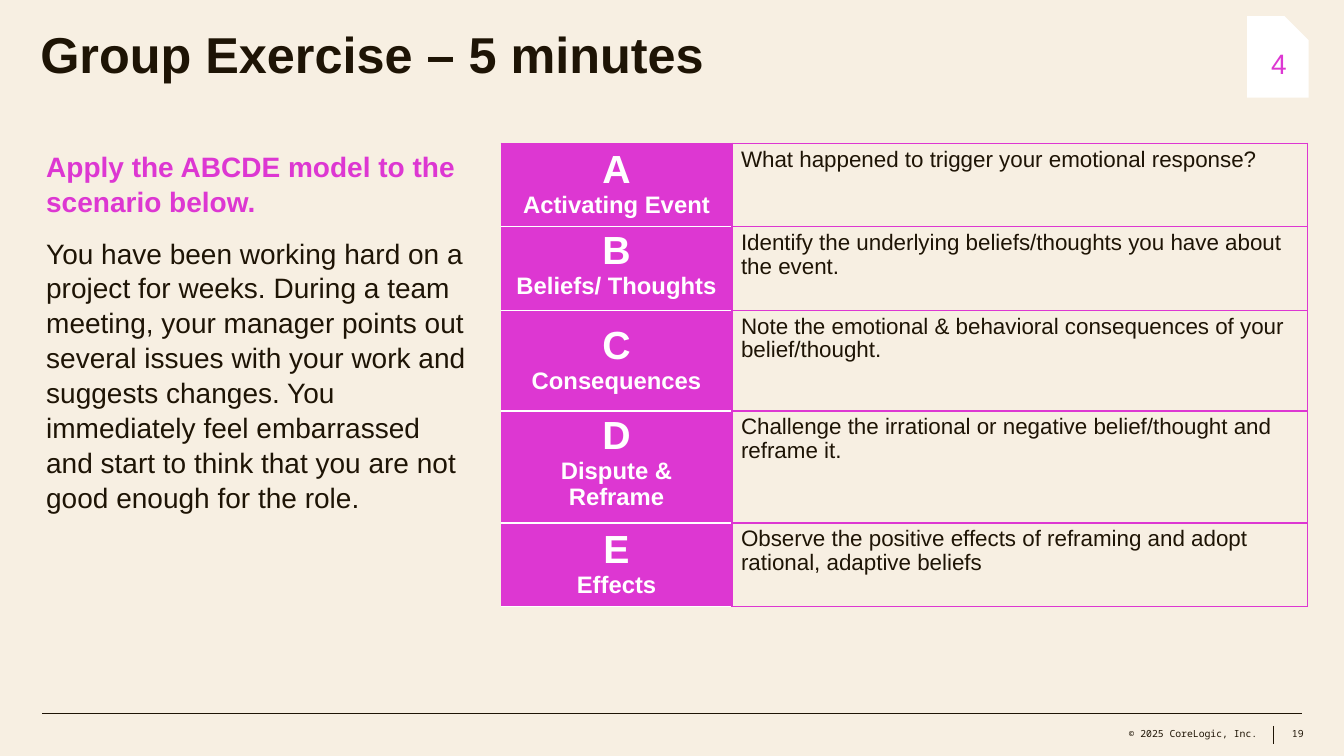
from dataclasses import dataclass

from lxml import etree
from pptx import Presentation, util as u
from pptx.dml.color import RGBColor
from pptx.enum import shapes, text
from pptx.oxml import ns


@dataclass(frozen=True)
class Theme:
    """Colours, fonts and type sizes of the slide."""
    paper: str = "F7EFE2"
    ink: str = "1E1405"
    accent: str = "DD37D2"
    white: str = "FFFFFF"
    sans: str = "Arial"
    mono: str = "Noto Sans Mono"
    title: int = 36
    letter: int = 28
    body: int = 20
    label: int = 17
    prompt: int = 16
    footer: int = 7


THEME = Theme()
ALIGN = text.PP_ALIGN
ANCHOR = text.MSO_ANCHOR
STEPS = [
    ("A", "Activating Event", "What happened to trigger your emotional response?", 0.79, ANCHOR.MIDDLE),
    ("B", "Beliefs/ Thoughts", "Identify the underlying beliefs/thoughts you have about the event.",
     0.83, ANCHOR.TOP),
    ("C", "Consequences", "Note the emotional & behavioral consequences of your belief/thought.",
     1.0, ANCHOR.MIDDLE),
    ("D", "Dispute & Reframe", "Challenge the irrational or negative belief/thought and reframe it.",
     1.06, ANCHOR.TOP),
    ("E", "Effects", "Observe the positive effects of reframing and adopt rational, adaptive beliefs",
     0.83, ANCHOR.MIDDLE),
]
SCENARIO = (
    "You have been working hard on a project for weeks. During a team meeting, your manager points out "
    "several issues with your work and suggests changes. You immediately feel embarrassed and start to "
    "think that you are not good enough for the role."
)


def inches(box):
    """Turn a box of numbers into lengths."""
    return [u.Inches(value) for value in box]


def style(target, values):
    """Set attributes from a dict of format values."""
    for name, value in values.items():
        setattr(target, name, value)


def write(frame, lines):
    """Fill a text frame with (wording, size, colour, font values, paragraph values) lines."""
    for index, (wording, size, colour, font, layout) in enumerate(lines):
        paragraph = frame.add_paragraph() if index else frame.paragraphs[0]
        style(paragraph, layout)
        run = paragraph.add_run()
        run.text = wording
        style(run.font, {"name": THEME.sans, "size": u.Pt(size), **font})
        run.font.color.rgb = RGBColor.from_string(colour)


def add_text(slide, box, lines, margins=(0.1, 0.05, 0.1, 0.05), anchor=ANCHOR.TOP):
    """Place a wrapping text box."""
    frame = slide.shapes.add_textbox(*inches(box)).text_frame
    sides = ("margin_left", "margin_top", "margin_right", "margin_bottom")
    style(frame, {"word_wrap": True, "vertical_anchor": anchor, **dict(zip(sides, inches(margins)))})
    write(frame, lines)


def add_rule(slide, start, end):
    """Draw a thin footer rule."""
    rule = slide.shapes.add_connector(shapes.MSO_CONNECTOR.STRAIGHT, *inches(start + end))
    rule.line.width = u.Pt(0.5)
    rule.line.color.rgb = RGBColor.from_string(THEME.ink)
    etree.SubElement(rule.element.spPr, ns.qn("a:effectLst"))


def add_page_tab(slide, box):
    """Place the numbered tab with its snipped corner."""
    tab = slide.shapes.add_shape(shapes.MSO_SHAPE.SNIP_1_RECTANGLE, *inches(box))
    tab.shadow.inherit = False
    tab.adjustments[0] = 0.395
    tab.fill.solid()
    tab.fill.fore_color.rgb = RGBColor.from_string(THEME.white)
    tab.line.fill.background()
    tab.text_frame.vertical_anchor = ANCHOR.MIDDLE
    write(tab.text_frame, [("4", THEME.body, THEME.accent, {}, {"alignment": ALIGN.RIGHT})])


def set_borders(cell, colours):
    """Draw the left, right, top and bottom borders of a cell."""
    properties = cell._tc.get_or_add_tcPr()
    for side, colour in zip("LRTB", colours):
        line = etree.SubElement(properties, ns.qn(f"a:ln{side}"), w=str(u.Pt(1)))
        fill = etree.SubElement(line, ns.qn("a:solidFill"))
        etree.SubElement(fill, ns.qn("a:srgbClr"), val=colour)


def add_model_table(slide, box):
    """Place the ABCDE table, one row for each step."""
    table = slide.shapes.add_table(len(STEPS), 2, *inches(box)).table
    style(table, {"first_row": False, "horz_banding": False})
    label_width = 2.29
    for column, width in zip(table.columns, (label_width, box[2] - label_width)):
        column.width = u.Inches(width)
    accent, white = THEME.accent, THEME.white
    for index, (letter, name, prompt, height, anchor) in enumerate(STEPS):
        table.rows[index].height = u.Inches(height)
        label, answer = table.cell(index, 0), table.cell(index, 1)
        for cell in (label, answer):
            style(cell, {"margin_left": u.Inches(0.09), "margin_right": u.Inches(0.09)})
        label.vertical_anchor = anchor
        set_borders(label, (accent, accent, white if index else accent, white))
        set_borders(answer, (accent,) * 4)
        label.fill.solid()
        label.fill.fore_color.rgb = RGBColor.from_string(accent)
        answer.fill.background()
        centred = {"alignment": ALIGN.CENTER}
        write(label.text_frame, [
            (letter, THEME.letter, white, {"bold": True}, {**centred, "line_spacing": 0.95}),
            (name, THEME.label, white, {"bold": True}, centred),
        ])
        write(answer.text_frame, [
            (prompt, THEME.prompt, THEME.ink, {"bold": False}, {"line_spacing": 0.95}),
        ])


def add_scenario(slide, box):
    """Place the instruction and the scenario."""
    add_text(slide, box, [
        ("Apply the ABCDE model to the scenario below.", THEME.body, THEME.accent,
         {"bold": True}, {"line_spacing": 1.04, "space_after": u.Pt(12)}),
        (SCENARIO, THEME.body, THEME.ink, {}, {"line_spacing": 1.04}),
    ])


def add_footer(slide, box):
    """Place the footer rules, copyright line and page number."""
    left, top, width, height = box
    right = left + width
    divider = right - 0.28
    add_rule(slide, (left, top), (right, top))
    add_rule(slide, (divider, top + 0.12), (divider, top + 0.3))
    notes = [("© 2025 CoreLogic, Inc.", 2.11, right - 0.44), ("19", 0.31, right + 0.02)]
    for wording, note_width, note_right in notes:
        add_text(slide, (note_right - note_width, top + 0.01, note_width, height),
                 [(wording, THEME.footer, THEME.ink, {"name": THEME.mono}, {"alignment": ALIGN.RIGHT})],
                 (0, 0, 0, 0), ANCHOR.BOTTOM)


def add_exercise_slide(presentation):
    """Build the group exercise slide."""
    slide = presentation.slides.add_slide(presentation.slide_layouts[6])
    slide.background.fill.solid()
    slide.background.fill.fore_color.rgb = RGBColor.from_string(THEME.paper)
    add_footer(slide, (0.42, 7.08, 12.49, 0.25))
    add_text(slide, (0.4, 0.22, 8.76, 1.21),
             [("Group Exercise – 5 minutes", THEME.title, THEME.ink, {"bold": True}, {"line_spacing": 0.95})],
             (0, 0.05, 0, 0))
    add_model_table(slide, (4.97, 1.42, 8, 4.51))
    add_scenario(slide, (0.36, 1.42, 4.36, 3.97))
    add_page_tab(slide, (12.37, 0.16, 0.61, 0.81))


def main():
    """Create and save the presentation."""
    presentation = Presentation()
    style(presentation, {"slide_width": u.Inches(13.33), "slide_height": u.Inches(7.5)})
    add_exercise_slide(presentation)
    presentation.save("out.pptx")


if __name__ == "__main__":
    main()
